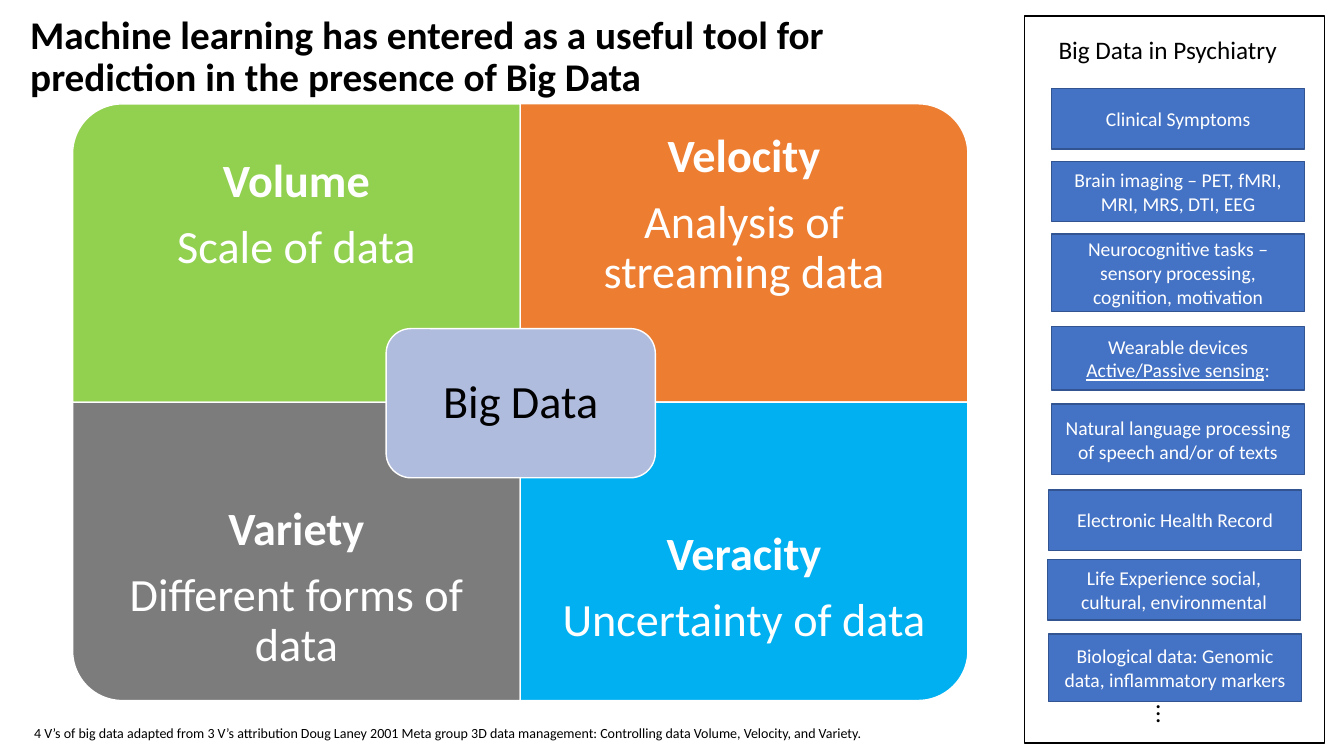
from pptx import Presentation
from pptx.dml.color import RGBColor
from pptx.enum.shapes import MSO_SHAPE
from pptx.enum.text import MSO_ANCHOR, MSO_AUTO_SIZE, PP_ALIGN
from pptx.util import Inches, Pt

RECT = MSO_SHAPE.RECTANGLE
ROUNDED = MSO_SHAPE.ROUNDED_RECTANGLE
ONE_ROUND = MSO_SHAPE.ROUND_1_RECTANGLE
MIDDLE, TOP = MSO_ANCHOR.MIDDLE, MSO_ANCHOR.TOP
LEFT, CENTER = PP_ALIGN.LEFT, PP_ALIGN.CENTER
NO_AUTOFIT = MSO_AUTO_SIZE.NONE

BLACK = RGBColor(0x00, 0x00, 0x00)
WHITE = RGBColor(0xFF, 0xFF, 0xFF)
GREEN = RGBColor(0x92, 0xD0, 0x50)
ORANGE = RGBColor(0xED, 0x7D, 0x31)
GRAY = RGBColor(0x7C, 0x7C, 0x7C)
SKY = RGBColor(0x00, 0xB0, 0xF0)
LAVENDER = RGBColor(0xB0, 0xBC, 0xDE)
BLUE = RGBColor(0x44, 0x72, 0xC4)
DARK_BLUE = RGBColor(0x32, 0x54, 0x91)

FONT = "Calibri"
MATRIX_LEFT, MATRIX_TOP = 0.72, 1.03
QUAD_W, QUAD_H = 4.44, 2.96
LABEL_H = 2.22
SOURCE_W = 2.51

# heading, description, colour, column, row, rotation
QUADRANTS = [
    ("Volume", "Scale of data", GREEN, 0, 0, 270),
    ("Velocity", "Analysis of streaming data", ORANGE, 1, 0, 0),
    ("Variety", "Different forms of data", GRAY, 0, 1, 180),
    ("Veracity", "Uncertainty of data", SKY, 1, 1, 90),
]

# text, left, top, height
DATA_SOURCES = [
    ("Clinical Symptoms", 10.43, 0.88, 0.6),
    ("Brain imaging – PET, fMRI, MRI, MRS, DTI, EEG", 10.43, 1.6, 0.6),
    ("Neurocognitive tasks – sensory processing, cognition, motivation",
     10.43, 2.32, 0.77),
    ("Wearable devices", 10.43, 3.24, 0.63),
    ("Natural language processing of speech and/or of texts",
     10.43, 4.01, 0.7),
    ("Electronic Health Record", 10.4, 4.86, 0.6),
    ("Life Experience social, cultural, environmental", 10.39, 5.55, 0.6),
    ("Biological data: Genomic data, inflammatory markers",
     10.4, 6.29, 0.67),
]


def write(frame, lines, size, color, align=LEFT, anchor=TOP, bold=False,
          spacing=None, after=None, inset=None):
    frame.word_wrap = True
    frame.vertical_anchor = anchor
    if inset is not None:
        frame.margin_left = frame.margin_right = Inches(inset)
        frame.margin_top = frame.margin_bottom = Inches(inset)
    for i, line in enumerate(lines):
        paragraph = frame.add_paragraph() if i else frame.paragraphs[0]
        paragraph.text = line
        paragraph.alignment = align
        paragraph.line_spacing = spacing
        if after is not None:
            paragraph.space_after = Pt(after)
        font = paragraph.font
        font.name, font.size, font.bold = FONT, Pt(size), bold
        font.color.rgb = color


def add_box(slide, kind, left, top, width, height, fill, line):
    box = slide.shapes.add_shape(kind, Inches(left), Inches(top),
                                 Inches(width), Inches(height))
    box.shadow.inherit = False
    if fill is None:
        box.fill.background()
    else:
        box.fill.solid()
        box.fill.fore_color.rgb = fill
    box.line.color.rgb = line
    box.line.width = Pt(1)
    return box


def add_text(slide, left, top, width, height, lines, size, color, **style):
    label = slide.shapes.add_textbox(Inches(left), Inches(top),
                                     Inches(width), Inches(height))
    write(label.text_frame, lines, size, color, **style)
    return label


def add_title(slide, text):
    title = slide.shapes.title
    title.left, title.top = Inches(0.2), Inches(0)
    title.width, title.height = Inches(9.19), Inches(1.15)
    write(title.text_frame, [text], 28, BLACK, anchor=MIDDLE, bold=True,
          spacing=0.9)
    title.text_frame.auto_size = NO_AUTOFIT


def add_quadrant(slide, heading, description, color, col, row, rotation):
    left = MATRIX_LEFT + col * QUAD_W
    top = MATRIX_TOP + row * QUAD_H
    # A quarter turn swaps the sides around the same centre
    width, height = (QUAD_H, QUAD_W) if rotation % 180 else (QUAD_W, QUAD_H)
    tile = add_box(slide, ONE_ROUND, left + (QUAD_W - width) / 2,
                   top + (QUAD_H - height) / 2, width, height, color, WHITE)
    tile.rotation = rotation
    label = add_text(slide, left, top + row * (QUAD_H - LABEL_H), QUAD_W,
                     LABEL_H, [heading, description], 33, WHITE,
                     align=CENTER, anchor=MIDDLE, spacing=0.9, after=11.5,
                     inset=0.26)
    label.text_frame.paragraphs[0].font.bold = True


def add_data_source(slide, text, left, top, height):
    source = add_box(slide, RECT, left, top, SOURCE_W, height, BLUE, DARK_BLUE)
    write(source.text_frame, [text], 14, WHITE, align=CENTER, anchor=MIDDLE)
    return source


def add_sensing_line(source):
    paragraph = source.text_frame.add_paragraph()
    paragraph.alignment = CENTER
    sensing = paragraph.add_run()
    sensing.text = "Active/Passive sensing"
    sensing.font.underline = True
    paragraph.add_run().text = ":"
    paragraph.font.name, paragraph.font.size = FONT, Pt(14)
    paragraph.font.color.rgb = WHITE


def main():
    prs = Presentation()
    prs.slide_width, prs.slide_height = Inches(13.33), Inches(7.5)
    slide = prs.slides.add_slide(prs.slide_layouts[5])
    add_title(slide, "Machine learning has entered as a useful tool for "
                     "prediction in the presence of Big Data")

    # Four V's matrix
    for quadrant in QUADRANTS:
        add_quadrant(slide, *quadrant)
    hub = add_box(slide, ROUNDED, 3.83, 3.26, 2.67, 1.48, LAVENDER, WHITE)
    write(hub.text_frame, ["Big Data"], 33, BLACK, align=CENTER,
          anchor=MIDDLE, spacing=0.9, inset=0.14)

    # Psychiatry panel
    add_box(slide, RECT, 10.16, 0.16, 2.98, 7.21, None, BLACK)
    add_text(slide, 10.4, 0.29, 2.82, 0.4, ["Big Data in Psychiatry"], 18,
             BLACK)
    for text, left, top, height in DATA_SOURCES:
        source = add_data_source(slide, text, left, top, height)
        if text == "Wearable devices":
            add_sensing_line(source)
    add_text(slide, 11.36, 6.96, 0.26, 0.36, ["."] * 3, 18, BLACK,
             spacing=Pt(5))

    # Attribution
    add_text(slide, 0.24, 7.14, 9.83, 0.27,
             ["4 V’s of big data adapted from 3 V’s attribution Doug Laney "
              "2001 Meta group 3D data management: Controlling data Volume, "
              "Velocity, and Variety."], 10, BLACK)

    prs.save("out.pptx")


if __name__ == "__main__":
    main()
